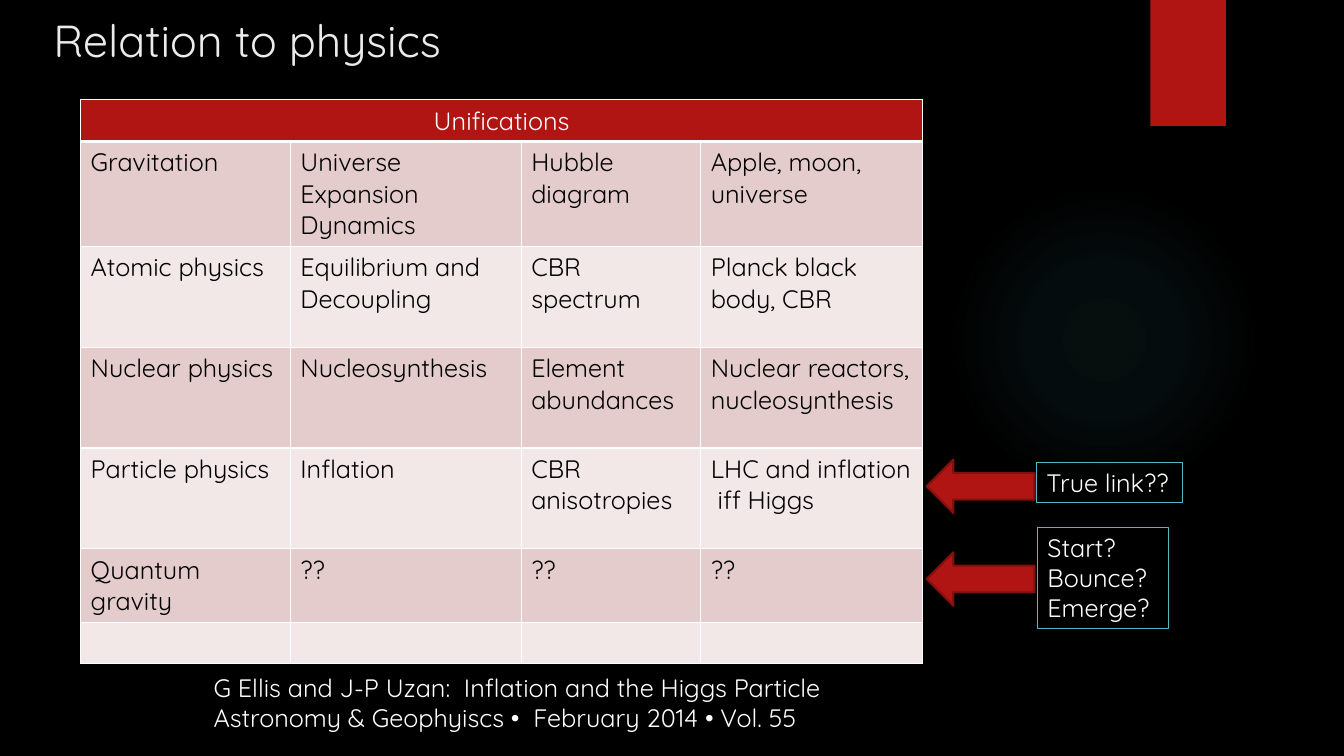
"""Build the "Relation to physics" slide with its table of unifications."""
from lxml import etree
from pptx import Presentation
from pptx.dml.color import RGBColor
from pptx.enum.shapes import MSO_SHAPE as Shape
from pptx.enum.text import MSO_ANCHOR as Anchor, MSO_AUTO_SIZE as AutoSize, PP_ALIGN as Align
from pptx.oxml import parse_xml
from pptx.oxml.ns import nsdecls, qn
from pptx.util import Inches, Pt


class Theme:
    font = "Quicksand"
    title_size = Pt(32)
    body_size = Pt(18)
    black = RGBColor.from_string("000000")
    white = RGBColor.from_string("FFFFFF")
    title = RGBColor.from_string("EBEBEB")
    red = RGBColor.from_string("B01513")
    dark_red = RGBColor.from_string("82100E")
    teal = RGBColor.from_string("50B9C1")
    bands = [RGBColor.from_string("E4CCCC"), RGBColor.from_string("F2E8E7")]


def write_text(frame, text, size=Theme.body_size, color=Theme.white, align=Align.LEFT):
    """Fill a text frame with one paragraph per line of text."""
    for index, line in enumerate(text.split("\n")):
        paragraph = frame.add_paragraph() if index else frame.paragraphs[0]
        paragraph.alignment = align
        run = paragraph.add_run()
        run.text = line
        run.font.name = Theme.font
        run.font.size = size
        run.font.color.rgb = color


def add_borders(cell, bottom=1):
    """Draw white borders, in points, round a table cell."""
    properties = cell._tc.get_or_add_tcPr()
    widths = {"lnL": 1, "lnR": 1, "lnT": 1, "lnB": bottom}
    for position, (side, width) in enumerate(widths.items()):
        line = etree.Element(qn(f"a:{side}"), w=str(Pt(width)))
        fill = etree.SubElement(line, qn("a:solidFill"))
        etree.SubElement(fill, qn("a:srgbClr"), val=str(Theme.white))
        properties.insert(position, line)


presentation = Presentation()
presentation.slide_width = Inches(13.33)
presentation.slide_height = Inches(7.5)
slide = presentation.slides.add_slide(presentation.slide_layouts[5])
slide.background.fill.solid()
slide.background.fill.fore_color.rgb = Theme.black
shapes = slide.shapes

glow = shapes.add_shape(Shape.OVAL, Inches(9.41), Inches(1.83), Inches(3.08), Inches(3.08))
glow.shadow.inherit = False
glow.line.fill.background()
stops = "".join(
    f'<a:gs pos="{position * 1000}"><a:srgbClr val="{Theme.teal}">'
    f'<a:alpha val="{alpha * 1000}"/></a:srgbClr></a:gs>'
    for position, alpha in [(0, 7), (36, 6), (69, 0)]
)
gradient = parse_xml(
    f'<a:gradFill {nsdecls("a")}><a:gsLst>{stops}</a:gsLst><a:path path="circle">'
    '<a:fillToRect l="50000" t="50000" r="50000" b="50000"/></a:path></a:gradFill>'
)
glow._element.spPr.find(qn("a:prstGeom")).addnext(gradient)

ribbon = shapes.add_shape(Shape.RECTANGLE, Inches(11.41), Inches(0), Inches(0.75), Inches(1.25))
ribbon.shadow.inherit = False
ribbon.fill.solid()
ribbon.fill.fore_color.rgb = Theme.red
ribbon.line.fill.background()

title = shapes.title
title.left, title.top = Inches(0.43), Inches(-0.63)
title.width, title.height = Inches(8.5), Inches(1.34)
title.text_frame.auto_size = AutoSize.NONE
title.text_frame.vertical_anchor = Anchor.BOTTOM
write_text(title.text_frame, "Relation to physics", size=Theme.title_size, color=Theme.title)

unifications = [
    ["Gravitation", "Universe Expansion Dynamics", "Hubble diagram", "Apple, moon,  universe"],
    ["Atomic physics", "Equilibrium and Decoupling", "CBR spectrum", "Planck black body, CBR"],
    ["Nuclear physics", "Nucleosynthesis", "Element abundances", "Nuclear reactors, nucleosynthesis"],
    ["Particle physics", "Inflation", "CBR anisotropies", "LHC and inflation  iff Higgs"],
    ["Quantum gravity", "??", "??", "??"],
    ["", "", "", ""],
]
column_widths = [2.08, 2.29, 1.78, 2.2]
row_heights = [0.41, 1, 1, 1, 1, 0.7, 0.41]
table = shapes.add_table(
    len(row_heights), len(column_widths), Inches(0.8), Inches(0.99), Inches(8.35), Inches(5.52)
).table
table.first_row = False
table.horz_banding = False
for column, width in zip(table.columns, column_widths):
    column.width = Inches(width)
for row, height in zip(table.rows, row_heights):
    row.height = Inches(height)

header = table.cell(0, 0)
header.merge(table.cell(0, len(column_widths) - 1))
write_text(header.text_frame, "Unifications", align=Align.CENTER)
for cell in table.rows[0].cells:
    cell.fill.solid()
    cell.fill.fore_color.rgb = Theme.red
    add_borders(cell, bottom=3)
for row_index, texts in enumerate(unifications):
    for cell, text in zip(table.rows[row_index + 1].cells, texts):
        cell.fill.solid()
        cell.fill.fore_color.rgb = Theme.bands[row_index % 2]
        add_borders(cell)
        if text:
            write_text(cell.text_frame, text, color=Theme.black)

citation = shapes.add_textbox(Inches(2.02), Inches(6.62), Inches(6.83), Inches(0.71))
citation.text_frame.word_wrap = True
write_text(
    citation.text_frame,
    "G Ellis and J-P Uzan:  Inflation and the Higgs Particle\n"
    "Astronomy & Geophyiscs •  February 2014 • Vol. 55",
)

callouts = [
    ("Start?\nBounce?\nEmerge?", 10.29, 5.23, 1.3, 1.01, 5.48),
    ("True link??", 10.28, 4.59, 1.45, 0.4, 4.56),
]
for text, left, top, width, height, arrow_top in callouts:
    box = shapes.add_textbox(Inches(left), Inches(top), Inches(width), Inches(height))
    box.line.color.rgb = Theme.teal
    box.line.width = Pt(0.75)
    box.text_frame.word_wrap = False
    box.text_frame.auto_size = AutoSize.SHAPE_TO_FIT_TEXT
    write_text(box.text_frame, text)

    arrow = shapes.add_shape(
        Shape.LEFT_ARROW, Inches(9.19), Inches(arrow_top), Inches(1.07), Inches(0.53)
    )
    arrow.shadow.inherit = False
    arrow.fill.solid()
    arrow.fill.fore_color.rgb = Theme.red
    arrow.line.color.rgb = Theme.dark_red
    arrow.line.width = Pt(1.5)

presentation.save("out.pptx")
